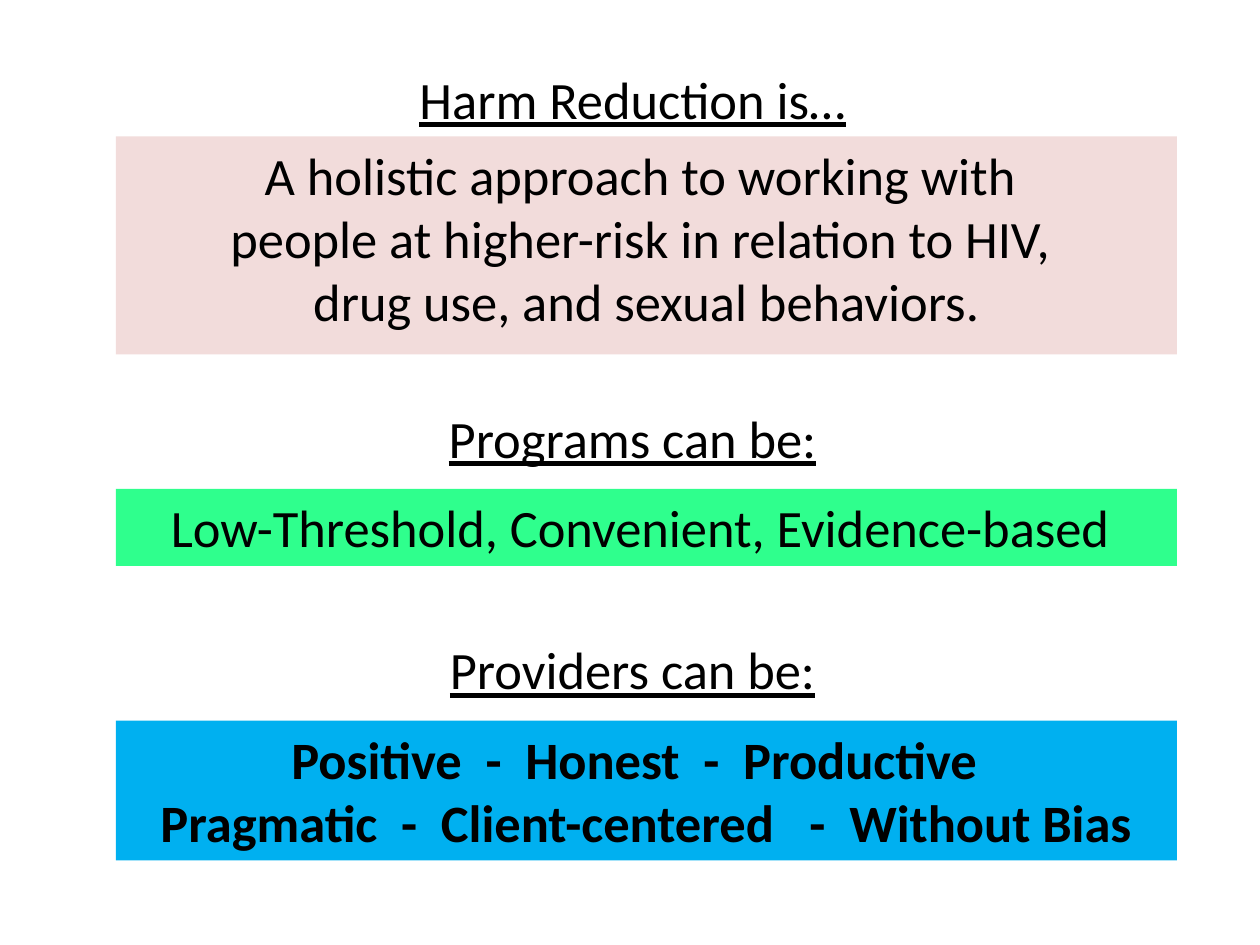
from pptx import Presentation
from pptx.dml.color import RGBColor
from pptx.enum.shapes import MSO_SHAPE
from pptx.enum.text import MSO_ANCHOR, PP_ALIGN
from pptx.util import Pt

BLACK = RGBColor(0, 0, 0)
PINK = RGBColor(0xF2, 0xDC, 0xDB)
GREEN = RGBColor(0x2F, 0xFF, 0x8D)
BLUE = RGBColor(0x00, 0xB0, 0xF0)
LEFT, WIDTH = 66.24, 606.24
MID = 361.5  # centre line of the headings


def write(frame, lines, bold=False, line=False):
    frame.vertical_anchor = MSO_ANCHOR.TOP
    for i, text in enumerate(lines):
        para = frame.add_paragraph() if i else frame.paragraphs[0]
        para.alignment = PP_ALIGN.CENTER
        run = para.add_run()
        run.text = text
        font = run.font
        font.name, font.size = "Calibri", Pt(30)
        font.bold, font.underline = bold, line
        font.color.rgb = BLACK


prs = Presentation()
prs.slide_width, prs.slide_height = Pt(720), Pt(540)
slide = prs.slides.add_slide(prs.slide_layouts[6])

# Heading, its top and width; panel top, height, fill, bold and lines
parts = [
    ("Harm Reduction is…", 34.5, 260.6, 78, 124.5, PINK, False,
     ["A holistic approach to working with ",
      "people at higher-risk in relation to HIV, ",
      "drug use, and sexual behaviors."]),
    ("Programs can be:", 228.2, 226.8, 279.4, 43.9, GREEN, False,
     ["Low-Threshold, Convenient, Evidence-based "]),
    ("Providers can be:", 360.7, 225.4, 411.8, 79.9, BLUE, True,
     ["Positive  -  Honest  -  Productive  ",
      "Pragmatic  -  Client-centered   -  Without Bias"]),
]

for title, top, wide, y, high, fill, bold, lines in parts:
    # Coloured panel
    panel = slide.shapes.add_shape(
        MSO_SHAPE.RECTANGLE, Pt(LEFT), Pt(y), Pt(WIDTH), Pt(high))
    panel.shadow.inherit = False
    panel.fill.solid()
    panel.fill.fore_color.rgb = fill
    panel.line.fill.background()
    frame = panel.text_frame
    frame.word_wrap = True
    frame.margin_left = frame.margin_right = Pt(3.6)
    frame.margin_top = frame.margin_bottom = Pt(3.6)
    write(frame, lines, bold=bold)

    # Underlined heading
    head = slide.shapes.add_textbox(
        Pt(MID - wide / 2), Pt(top), Pt(wide), Pt(43.9))
    head.text_frame.word_wrap = False
    write(head.text_frame, [title], line=True)

prs.save("out.pptx")
